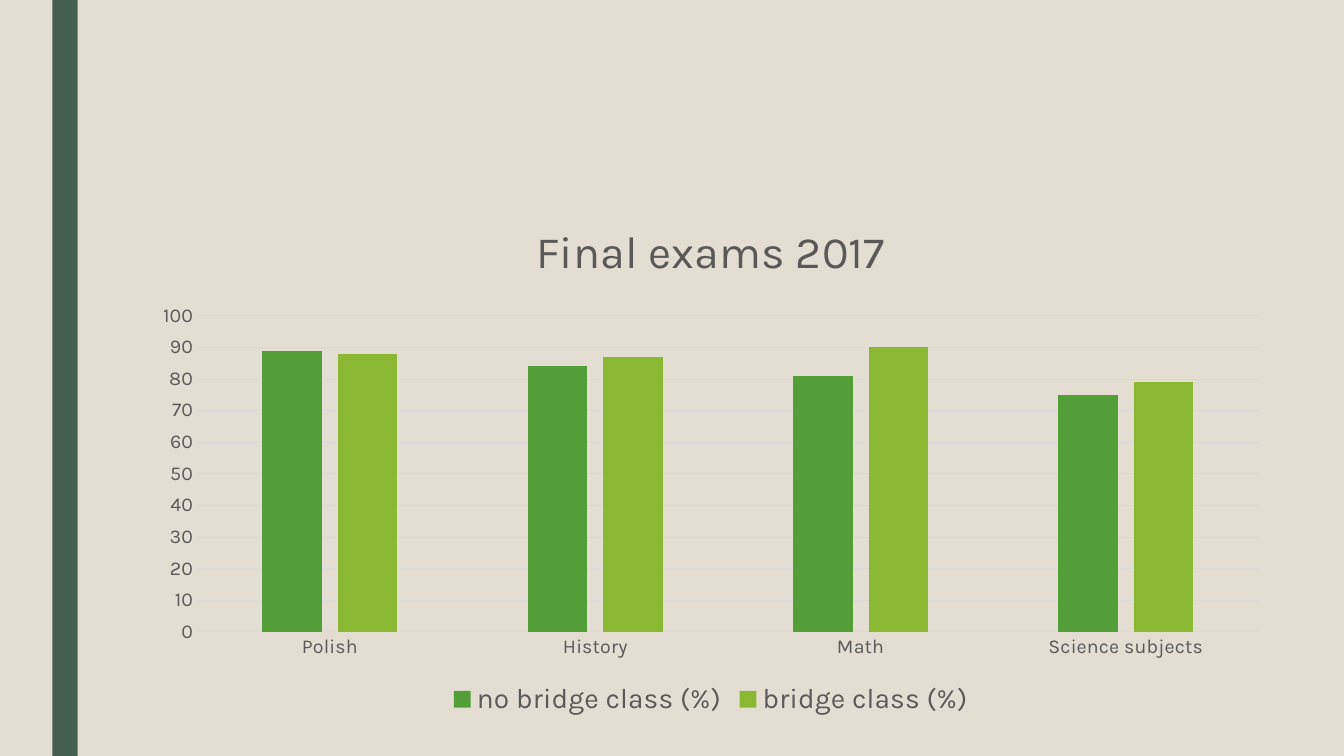
from lxml import etree
from pptx import Presentation
from pptx.chart.data import CategoryChartData
from pptx.dml.color import RGBColor
from pptx.enum import chart as ch, shapes
from pptx.util import Inches, Pt

BACKGROUND = RGBColor(0xE3, 0xDE, 0xD1)
STRIPE = RGBColor(0x45, 0x5F, 0x51)
INK = RGBColor(0x59, 0x59, 0x59)
GRID = RGBColor(0xD9, 0xD9, 0xD9)
FONT = "Karla"

SUBJECTS = ["Polish", "History", "Math", "Science subjects"]
RESULTS = [
    ("no bridge class (%)", (89, 84, 81, 75), RGBColor(0x54, 0x9E, 0x39)),
    ("bridge class (%)", (88, 87, 90, 79), RGBColor(0x8A, 0xB8, 0x33)),
]


def style_font(font, size):
    font.name = FONT
    font.size = Pt(size)
    font.bold = False
    font.color.rgb = INK


def style_line(line):
    line.color.rgb = GRID
    line.width = Pt(0.75)


def add_stripe(slide):
    stripe = slide.shapes.add_shape(
        shapes.MSO_SHAPE.RECTANGLE, Inches(0.52), 0, Inches(0.25), Inches(7.5))
    stripe.shadow.inherit = False
    stripe.fill.solid()
    stripe.fill.fore_color.rgb = STRIPE
    stripe.line.fill.background()


def add_exam_chart(slide):
    scores = CategoryChartData()
    scores.categories = SUBJECTS
    for name, values, _ in RESULTS:
        scores.add_series(name, values)
    exams = slide.shapes.add_chart(
        ch.XL_CHART_TYPE.COLUMN_CLUSTERED, Inches(1.39), Inches(1.97),
        Inches(11.32), Inches(5.19), scores).chart
    style_font(exams.font, 10)

    # Title
    exams.has_title = True
    heading = exams.chart_title.text_frame.paragraphs[0].add_run()
    heading.text = "Final exams 2017"
    style_font(heading.font, 32)
    exams.chart_title.include_in_layout = False

    # Legend
    exams.has_legend = True
    exams.legend.position = ch.XL_LEGEND_POSITION.BOTTOM
    exams.legend.include_in_layout = False
    style_font(exams.legend.font, 20)

    # Axes
    subjects, percent = exams.category_axis, exams.value_axis
    for axis in (subjects, percent):
        axis.major_tick_mark = ch.XL_TICK_MARK.NONE
        axis.minor_tick_mark = ch.XL_TICK_MARK.NONE
        style_font(axis.tick_labels.font, 14)
    style_line(subjects.format.line)
    percent.format.line.fill.background()
    percent.minimum_scale, percent.maximum_scale = 0, 100
    percent.major_unit = 10
    percent.has_major_gridlines = True
    style_line(percent.major_gridlines.format.line)

    # Columns
    columns = exams.plots[0]
    columns.vary_by_categories = False
    columns.gap_width = 219
    columns.overlap = -27
    for series, (_, _, color) in zip(columns.series, RESULTS):
        series.format.fill.solid()
        series.format.fill.fore_color.rgb = color


def main():
    deck = Presentation()
    deck.slide_width, deck.slide_height = Inches(13.33), Inches(7.5)
    slide = deck.slides.add_slide(deck.slide_layouts[6])
    slide.background.fill.solid()
    slide.background.fill.fore_color.rgb = BACKGROUND
    add_stripe(slide)
    add_exam_chart(slide)
    deck.save("out.pptx")


if __name__ == "__main__":
    main()
